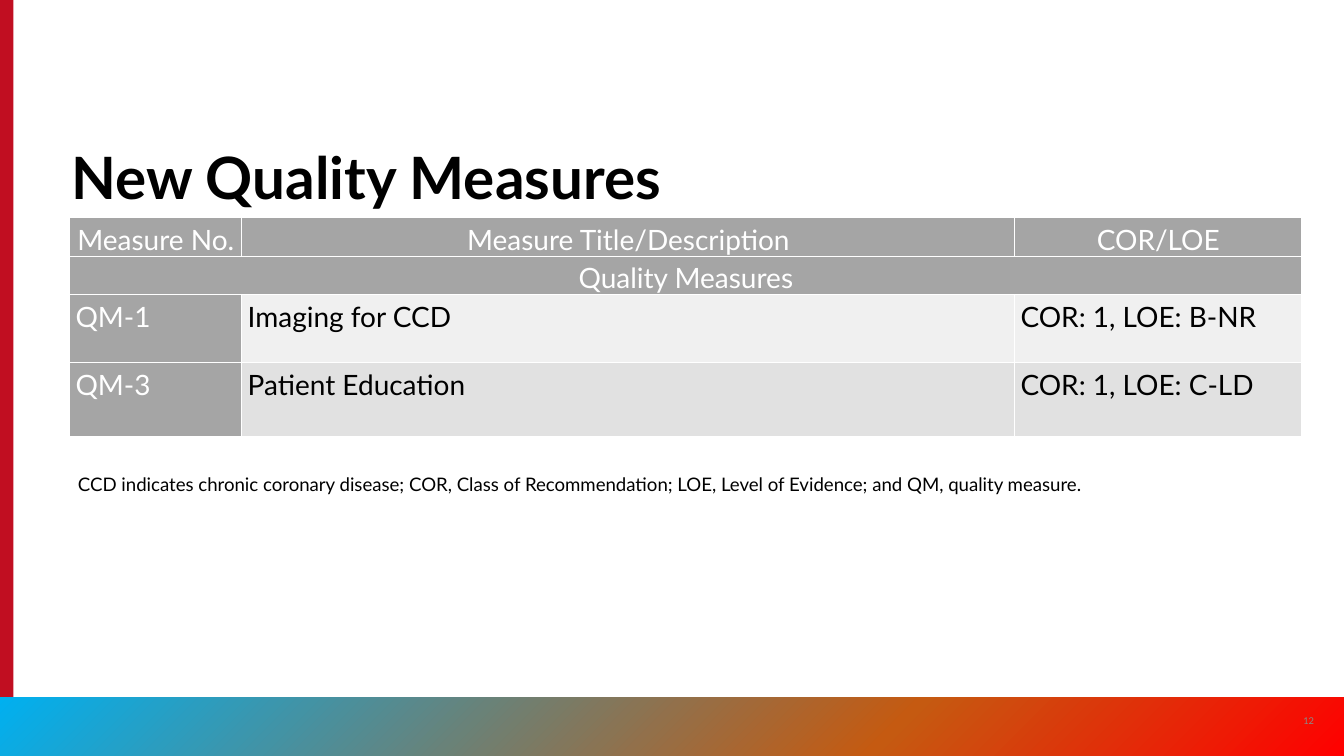
from copy import deepcopy

from lxml import etree
from pptx import Presentation
from pptx.dml.color import RGBColor
from pptx.enum.shapes import MSO_SHAPE
from pptx.enum.text import MSO_ANCHOR, PP_ALIGN
from pptx.oxml.ns import qn
from pptx.util import Inches, Pt

RECTANGLE = MSO_SHAPE.RECTANGLE
TOP, MIDDLE, BOTTOM = MSO_ANCHOR.TOP, MSO_ANCHOR.MIDDLE, MSO_ANCHOR.BOTTOM
LEFT, CENTER = PP_ALIGN.LEFT, PP_ALIGN.CENTER

FONT = "Lato"
BLACK, WHITE, GRAY = "000000", "FFFFFF", "A5A5A5"
BAND_STOPS = [(0, "00B0F0"), (0.66, "C55A11"), (1, "FF0000")]
COLUMN_WIDTHS = [2.05, 9.2, 3.42]
ROW_HEIGHTS = [0.42, 0.41, 0.81, 0.88]
HEADINGS = ["Measure No.", "Measure Title/Description", "COR/LOE"]
MEASURES = [
    (["QM-1", "Imaging for CCD", "COR: 1, LOE: B-NR"], "F0F0F0"),
    (["QM-3", "Patient Education", "COR: 1, LOE: C-LD"], "E1E1E1"),
]


def rgb(value):
    return RGBColor.from_string(value)


def write(frame, text, size=24, color=BLACK, bold=False, align=LEFT,
          line_spacing=1.0, space_after=0):
    frame.word_wrap = True
    para = frame.paragraphs[0]
    para.alignment = align
    para.line_spacing = line_spacing
    para.space_after = Pt(space_after)
    span = para.add_run()
    span.text = text
    span.font.name = FONT
    span.font.size = Pt(size)
    span.font.bold = bold
    span.font.color.rgb = rgb(color)


def add_text(page, box, text, anchor=TOP, **text_format):
    frame = page.shapes.add_textbox(*map(Inches, box)).text_frame
    frame.vertical_anchor = anchor
    write(frame, text, **text_format)


def add_bar(page, box):
    bar = page.shapes.add_shape(RECTANGLE, *map(Inches, box))
    bar.shadow.inherit = False
    bar.line.fill.background()
    return bar


def add_side_stripe(page, box):
    stripe = add_bar(page, box)
    stripe.fill.solid()
    stripe.fill.fore_color.rgb = rgb("C10E21")


def add_footer(page, box, number):
    """Gradient band with the page number near its right end."""
    left, top, width, _ = box
    band = add_bar(page, box)
    band.fill.gradient()
    band.fill.gradient_angle = 315
    stop_list = next(band._element.iter(qn("a:gsLst")))
    stop_list.append(deepcopy(stop_list[0]))
    for stop, (position, color) in zip(band.fill.gradient_stops, BAND_STOPS):
        stop.position = position
        stop.color.rgb = rgb(color)
    add_text(page, (left + width - 0.66, top + 0.04, 0.48, 0.48), number,
             anchor=MIDDLE, size=8, color="8A8B8A", align=CENTER)


def add_borders(cell, color=WHITE, width=1):
    properties = cell._tc.get_or_add_tcPr()
    for index, side in enumerate(("a:lnL", "a:lnR", "a:lnT", "a:lnB")):
        line = etree.Element(qn(side), w=str(Pt(width)))
        fill = etree.SubElement(line, qn("a:solidFill"))
        etree.SubElement(fill, qn("a:srgbClr"), val=color)
        properties.insert(index, line)


def fill_cell(cell, text, fill, **text_format):
    cell.margin_left = cell.margin_right = Inches(0.07)
    cell.margin_top = cell.margin_bottom = 0
    cell.fill.solid()
    cell.fill.fore_color.rgb = rgb(fill)
    write(cell.text_frame, text, line_spacing=1.15, space_after=10, **text_format)


def add_measure_table(page, left, top):
    box = (left, top, sum(COLUMN_WIDTHS), sum(ROW_HEIGHTS))
    table = page.shapes.add_table(
        len(ROW_HEIGHTS), len(COLUMN_WIDTHS), *map(Inches, box)).table
    table.first_row = table.horz_banding = False
    for column, width in zip(table.columns, COLUMN_WIDTHS):
        column.width = Inches(width)
    for row, height in zip(table.rows, ROW_HEIGHTS):
        row.height = Inches(height)

    for column, heading in enumerate(HEADINGS):
        fill_cell(table.cell(0, column), heading, GRAY, color=WHITE, align=CENTER)
    section = table.cell(1, 0)
    section.merge(table.cell(1, len(HEADINGS) - 1))
    fill_cell(section, "Quality Measures", GRAY, color=WHITE, align=CENTER)
    for row, (texts, shade) in enumerate(MEASURES, start=2):
        for column, text in enumerate(texts):
            fill, color = (shade, BLACK) if column else (GRAY, WHITE)
            fill_cell(table.cell(row, column), text, fill, color=color)
    for cell in table.iter_cells():
        add_borders(cell)


def add_measures_page(deck):
    page = deck.slides.add_slide(deck.slide_layouts[6])
    add_side_stripe(page, (0, 0, 0.16, 9))
    add_footer(page, (0, 8.3, 16, 0.7), "12")
    add_text(page, (0.75, 1.58, 14.08, 1), "New Quality Measures",
             anchor=BOTTOM, size=50, bold=True, line_spacing=0.9)
    add_measure_table(page, 0.83, 2.59)
    add_text(page, (0.83, 5.58, 14.33, 0.37),
             "CCD indicates chronic coronary disease; COR, Class of Recommendation; "
             "LOE, Level of Evidence; and QM, quality measure.", size=16)


def main():
    deck = Presentation()
    deck.slide_width, deck.slide_height = Inches(16), Inches(9)
    add_measures_page(deck)
    deck.save("out.pptx")


if __name__ == "__main__":
    main()
